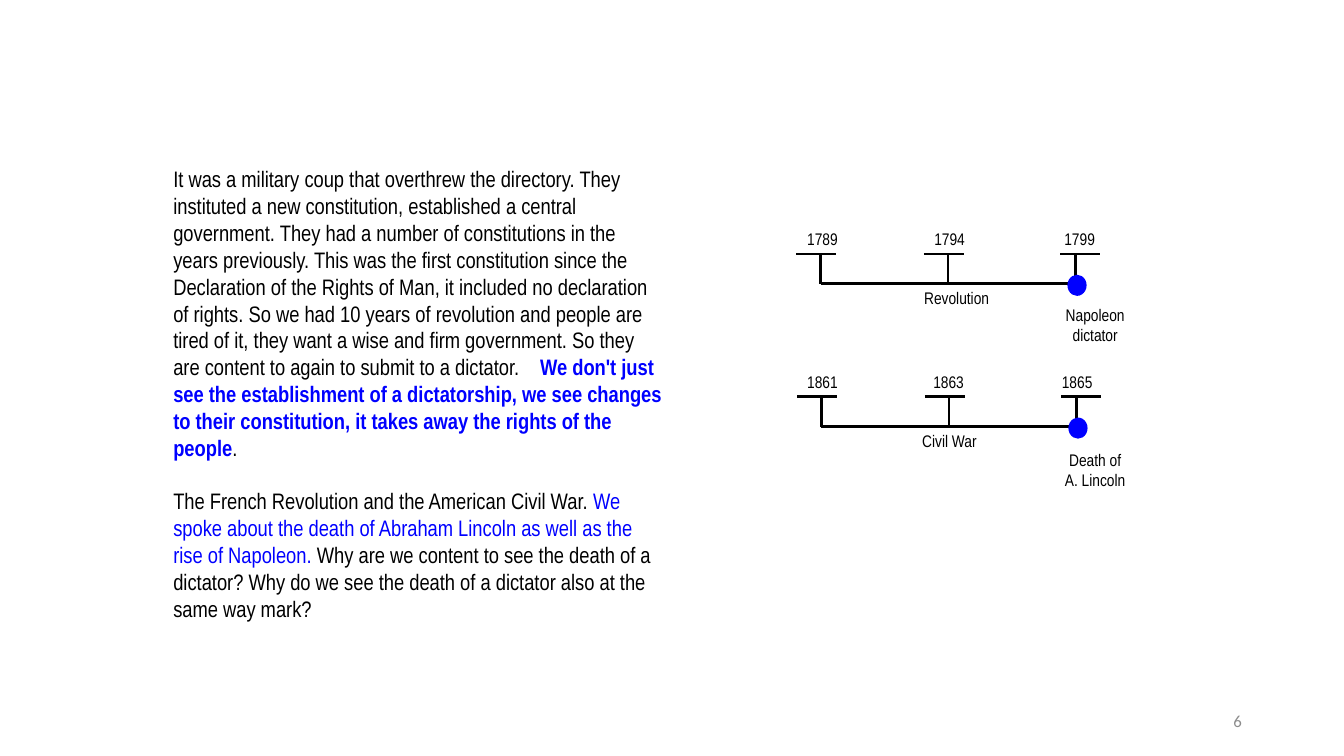
import pptx
import pptx.util
import pptx.dml.color
import pptx.enum.shapes
import pptx.enum.text
import pptx.oxml.ns
import lxml.etree

Pt = pptx.util.Pt
RGB = pptx.dml.color.RGBColor.from_string
ALIGN = pptx.enum.text.PP_ALIGN
ANCHOR = pptx.enum.text.MSO_ANCHOR

THEME = {
    "ink": "000000", "accent": "0000FF", "muted": "8C8C8C",
    "font": "Arial Narrow", "number_font": "Calibri",
    "body": 16, "label": 12, "line": 2,
}

BODY = [
    [("It was a military coup that overthrew the directory. They instituted a new "
      "constitution, established a central government. They had a number of "
      "constitutions in the years previously. This was the first constitution since "
      "the Declaration of the Rights of Man, it included no declaration of rights. "
      "So we had 10 years of revolution and people are tired of it, they want a wise "
      "and firm government. So they are content to again to submit to a dictator.",
      "ink", False, 0),
     (" ", "ink", False, 11),
     ("We don't just see the establishment of a dictatorship, we see changes to their "
      "constitution, it takes away the rights of the people", "accent", True, 0),
     (".", "ink", False, 0)],
    [("The French Revolution and the American Civil War. ", "ink", False, 0),
     ("We spoke about the death of Abraham Lincoln as well as the rise of Napoleon. ",
      "accent", False, 0),
     ("Why are we content to see the death of a dictator? Why do we see the death of "
      "a dictator also at the same way mark?", "ink", False, 0)],
]
PAGE_NUMBER = "6"

TIMELINES = [
    {"left": 586.1, "top": 181.4, "years": [("1789", 1.4), ("1794", 1.1), ("1799", 2.9)],
     "span": ("Revolution", 683.3), "outcome": (["Napoleon", "dictator"], 214.6)},
    {"left": 586.8, "top": 283.4, "years": [("1861", 0.7), ("1863", -0.3), ("1865", 0.4)],
     "span": ("Civil War", 678.2), "outcome": (["Death of", "A. Lincoln"], 318.2)},
]
STEP, DROP = 91.1, 21.4
TICK_OFFSETS, TICK_W = (-17.2, -17.2, -11), 28.6
LABEL_H, LABEL_INSET = 20.9, 2.9
OUTCOME_X = 782.3
DOT_W, DOT_H = 13.7, 15.1


def add_run(p, text, size, color="ink", font="font", bold=False):
    r = p.add_run()
    r.text = text
    r.font.name = THEME[font]
    r.font.size = Pt(size)
    r.font.bold = bold
    r.font.color.rgb = RGB(THEME[color])
    return r


def add_label(s, lines, center, top, width):
    tf = s.shapes.add_textbox(Pt(center - width / 2), Pt(top), Pt(width),
                              Pt(LABEL_H * len(lines))).text_frame
    tf.word_wrap = True
    tf.margin_left = tf.margin_right = tf.margin_top = tf.margin_bottom = Pt(LABEL_INSET)
    for i, line in enumerate(lines):
        p = tf.paragraphs[0] if i == 0 else tf.add_paragraph()
        p.alignment = ALIGN.CENTER
        add_run(p, line, THEME["label"])


def add_line(s, x1, y1, x2, y2):
    c = s.shapes.add_connector(pptx.enum.shapes.MSO_CONNECTOR.STRAIGHT,
                               Pt(x1), Pt(y1), Pt(x2), Pt(y2))
    c.line.color.rgb = RGB(THEME["ink"])
    c.line.width = Pt(THEME["line"])
    lxml.etree.SubElement(c._element.spPr, pptx.oxml.ns.qn("a:effectLst"))


def add_body(s):
    sp = s.placeholders[1]
    sp.left, sp.top, sp.width, sp.height = Pt(116.6), Pt(114.5), Pt(365.8), Pt(339)
    tf = sp.text_frame
    tf.word_wrap = True
    tf.auto_size = pptx.enum.text.MSO_AUTO_SIZE.NONE
    tf.vertical_anchor = ANCHOR.TOP
    for i, runs in enumerate(BODY):
        p = tf.paragraphs[0] if i == 0 else tf.add_paragraph()
        p.alignment = ALIGN.LEFT
        p.space_before = Pt(19 if i else 0)
        pPr = p._p.get_or_add_pPr()
        pPr.set("marL", "0")
        pPr.set("indent", "0")
        lxml.etree.SubElement(pPr, pptx.oxml.ns.qn("a:buNone"))
        for text, color, bold, spacing in runs:
            r = add_run(p, text, THEME["body"], color, bold=bold)
            if spacing:
                r._r.get_or_add_rPr().set("spc", str(spacing * 100))


def add_timeline(s, timeline):
    left, top = timeline["left"], timeline["top"]
    base = top + DROP
    right = left + STEP * (len(timeline["years"]) - 1)
    add_line(s, left, base, right, base)
    for i, (year, nudge) in enumerate(timeline["years"]):
        x = left + i * STEP
        tick = x + TICK_OFFSETS[i]
        add_line(s, x, top, x, base)
        add_line(s, tick, top, tick + TICK_W, top)
        add_label(s, [year], x + nudge, top - LABEL_H, 50)
    dot = s.shapes.add_shape(pptx.enum.shapes.MSO_SHAPE.OVAL,
                             Pt(right + 1 - DOT_W / 2), Pt(base + 1 - DOT_H / 2),
                             Pt(DOT_W), Pt(DOT_H))
    dot.shadow.inherit = False
    dot.fill.solid()
    dot.fill.fore_color.rgb = RGB(THEME["accent"])
    dot.line.fill.background()
    span, span_x = timeline["span"]
    add_label(s, [span], span_x, base, 120)
    outcome, outcome_top = timeline["outcome"]
    add_label(s, outcome, OUTCOME_X, outcome_top, 58)


def add_page_number(s):
    tf = s.shapes.add_textbox(Pt(678.2), Pt(500.4), Pt(216), Pt(28.8)).text_frame
    tf.word_wrap = True
    tf.vertical_anchor = ANCHOR.MIDDLE
    p = tf.paragraphs[0]
    p.alignment = ALIGN.RIGHT
    add_run(p, PAGE_NUMBER, THEME["label"], "muted", "number_font")


def main():
    prs = pptx.Presentation()
    prs.slide_width, prs.slide_height = Pt(960), Pt(540)
    s = prs.slides.add_slide(prs.slide_layouts[1])
    title = s.shapes.title._element
    title.getparent().remove(title)
    add_body(s)
    for timeline in TIMELINES:
        add_timeline(s, timeline)
    add_page_number(s)
    prs.save("out.pptx")


if __name__ == "__main__":
    main()
